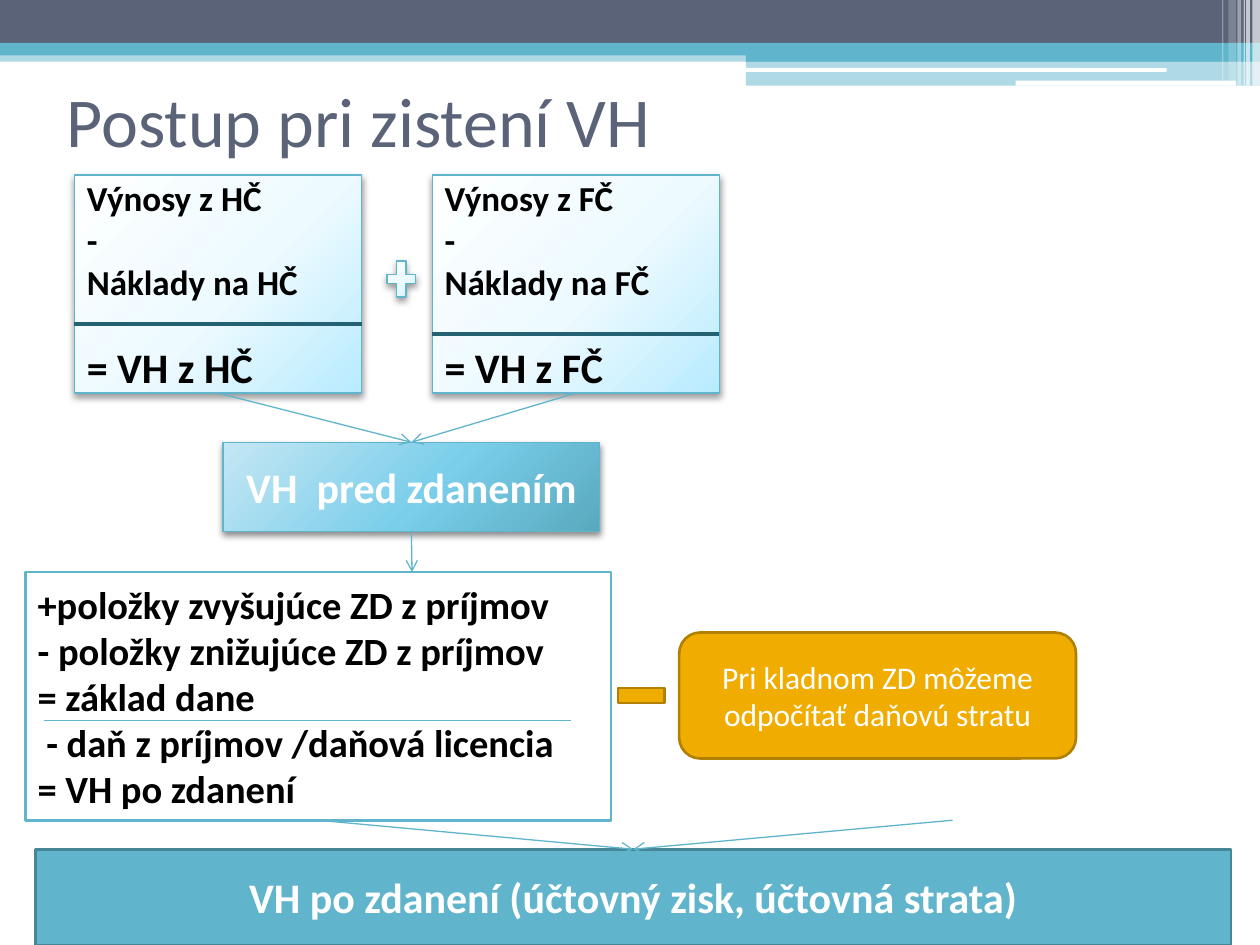
from pptx import Presentation
from pptx.dml.color import RGBColor
from pptx.enum.shapes import MSO_CONNECTOR, MSO_SHAPE as SHAPE
from pptx.enum.text import MSO_ANCHOR as ANCHOR, PP_ALIGN as ALIGN
from pptx.oxml import parse_xml
from pptx.oxml.ns import nsdecls, qn
from pptx.oxml.xmlchemy import OxmlElement
from pptx.util import Inches, Pt

FONT = "Calibri"
TEAL, SLATE, WHITE, BLACK = "60B5CC", "5A6378", "FFFFFF", "000000"
AMBER, AMBER_EDGE, DARK_TEAL, RULE = "F0AD00", "B28000", "478697", "246172"
PALE = [(0, "FEFFFF"), (55, "EDFAFF"), (100, "B7EBFF")]
DEEP = [(0, "C5E7F4"), (55, "7ACEEA"), (100, "59A9BE")]


def paint(fill, color, alpha=100):
    """Fill with one hex colour, optionally see-through."""
    fill.solid()
    fill.fore_color.rgb = RGBColor.from_string(color)
    if alpha < 100:
        node = OxmlElement("a:alpha")
        node.set("val", str(alpha * 1000))
        fill._xPr.find(".//" + qn("a:srgbClr")).append(node)


def glow(sp, stops, alpha=40):
    """Give a shape a radial gradient and a soft shadow below it."""
    gs = "".join(f'<a:gs pos="{pos * 1000}"><a:srgbClr val="{color}"/></a:gs>'
                 for pos, color in stops)
    sp.fill.background()
    pr = sp._element.spPr
    pr.replace(pr.find(qn("a:noFill")), parse_xml(
        f'<a:gradFill {nsdecls("a")} rotWithShape="1"><a:gsLst>{gs}</a:gsLst>'
        '<a:path path="circle"><a:fillToRect l="-40000" t="-90000" '
        'r="140000" b="190000"/></a:path></a:gradFill>'))
    pr.find(qn("a:effectLst")).append(parse_xml(
        f'<a:outerShdw {nsdecls("a")} blurRad="{Pt(4)}" dist="{Pt(2)}" '
        'dir="5400000" rotWithShape="0"><a:srgbClr val="000000">'
        f'<a:alpha val="{alpha * 1000}"/></a:srgbClr></a:outerShdw>'))


def add_box(s, box, kind=SHAPE.RECTANGLE, fill=None, alpha=100, line=None, width=1.5):
    """Add a preset shape in a box given as left, top, width, height."""
    sp = s.shapes.add_shape(kind, *map(Inches, box))
    sp.shadow.inherit = False
    if fill:
        paint(sp.fill, fill, alpha)
    if line:
        paint(sp.line.fill, line)
        sp.line.width = Pt(width)
    else:
        sp.line.fill.background()
    return sp


def write(sp, text, size=18, color=BLACK, bold=False, align=ALIGN.LEFT):
    """Write one paragraph, following any text already in the shape."""
    tf = sp.text_frame
    tf.word_wrap = True
    tf.vertical_anchor = ANCHOR.MIDDLE
    p = tf.add_paragraph() if tf.text else tf.paragraphs[0]
    p.text = text
    p.alignment = align
    for r in p.runs:
        r.font.name = FONT
        r.font.size = Pt(size)
        r.font.bold = bold
        paint(r.font.fill, color)
    return p


def add_line(s, start, end, color=TEAL, width=0.75, arrow=False, begin=None, finish=None):
    """Draw a straight line, joined to the bottom of begin and the top of finish."""
    line = s.shapes.add_connector(MSO_CONNECTOR.STRAIGHT, *map(Inches, start + end))
    paint(line.line.fill, color)
    line.line.width = Pt(width)
    if begin is not None:
        line.begin_connect(begin, 2)
    if finish is not None:
        line.end_connect(finish, 0)
    if arrow:
        tail = OxmlElement("a:tailEnd")
        tail.set("type", "arrow")
        line.line._get_or_add_ln().append(tail)
    line._element.spPr.append(OxmlElement("a:effectLst"))


def add_banner(s, width):
    """Draw the layered band and stripes along the top of the slide."""
    half = 5.92
    rest = width - half
    for box, color, alpha in [
            ((0, 0.4, width, 0.09), TEAL, 50),
            ((0, 0, width, 0.34), SLATE, 100),
            ((0, 0.34, width, 0.1), TEAL, 100),
            ((half, 0.39, rest, 0.1), TEAL, 100),
            ((half, 0.48, rest, 0.2), TEAL, 50)]:
        add_box(s, box, fill=color, alpha=alpha)
    for box in [(5.91, 0.54, 3.35, 0.03), (8.06, 0.64, 1.75, 0.04)]:
        add_box(s, box, SHAPE.ROUNDED_RECTANGLE, WHITE)
    for left, w, h, alpha in [
            (9.94, 0.06, 0.68, 65), (9.89, 0.03, 0.68, 65), (9.87, 0.01, 0.68, 60),
            (9.82, 0.03, 0.68, 40), (9.75, 0.06, 0.64, 20), (9.7, 0.01, 0.64, 30)]:
        add_box(s, (left, 0, w, h), fill=WHITE, alpha=alpha)


def add_title(s, box, text):
    """Place and format the title placeholder."""
    title = s.shapes.title
    title.left, title.top, title.width, title.height = map(Inches, box)
    write(title, text, size=40, color=SLATE)


def add_activity(s, box, code, rule_y):
    """Add the card that subtracts costs from revenues of one activity."""
    left, top, width, height = box
    card = add_box(s, box, line=TEAL, width=0.75)
    glow(card, PALE)
    write(card, f"Výnosy z {code}\v-", size=20, bold=True)
    write(card, f"Náklady na {code}", size=20, bold=True)
    write(card, f"= VH z {code}", size=24, bold=True).space_before = Pt(22)
    add_line(s, (left, top + rule_y), (left + width, top + rule_y), RULE, 2.25)
    return card


def add_pretax(s, box):
    """Add the box for the result before tax."""
    sp = add_box(s, box, line=TEAL, width=0.75)
    glow(sp, DEEP, 45)
    write(sp, "VH  pred zdanením", size=24, color=WHITE, bold=True, align=ALIGN.CENTER)
    return sp


def add_tax_steps(s, box):
    """Add the tax calculation with the rule under the tax base."""
    left, top = box[:2]
    sp = add_box(s, box, fill=WHITE, line=TEAL)
    for text in ["+položky zvyšujúce ZD z príjmov", "- položky znižujúce ZD z príjmov",
                 "= základ dane", " - daň z príjmov /daňová licencia", "= VH po zdanení"]:
        write(sp, text, size=22, bold=True)
    add_line(s, (left + 0.15, top + 1.18), (left + 4.33, top + 1.18))
    return sp


def add_loss_note(s, box):
    """Add the tax loss note with the minus sign before it."""
    left, top, _, height = box
    sp = add_box(s, box, SHAPE.ROUNDED_RECTANGLE, AMBER, line=AMBER_EDGE)
    write(sp, "Pri kladnom ZD môžeme odpočítať daňovú stratu", color=WHITE, align=ALIGN.CENTER)
    add_box(s, (left - 0.55, top + height / 2 - 0.25, 0.5, 0.5),
            SHAPE.MATH_MINUS, AMBER, line=AMBER_EDGE)


def add_result(s, box):
    """Add the bar for the result after tax."""
    sp = add_box(s, box, fill=TEAL, line=DARK_TEAL)
    write(sp, "VH po zdanení (účtovný zisk, účtovná strata)",
          size=24, color=WHITE, bold=True, align=ALIGN.CENTER)
    return sp


def main():
    """Build the slide and save it."""
    prs = Presentation()
    prs.slide_width, prs.slide_height = Inches(10), Inches(7.5)
    s = prs.slides.add_slide(prs.slide_layouts[5])
    add_banner(s, 10)
    add_title(s, (0.43, 0.44, 9, 1.02), "Postup pri zistení VH")
    cards = [add_activity(s, (left, 1.39, 2.28, 1.73), code, rule_y)
             for left, code, rule_y in [(0.59, "HČ", 1.18), (3.43, "FČ", 1.26)]]
    plus = add_box(s, (3.03, 2.02, 0.31, 0.39), SHAPE.MATH_PLUS, line=TEAL, width=0.75)
    glow(plus, PALE)
    pretax = add_pretax(s, (1.77, 3.51, 2.99, 0.71))
    steps = add_tax_steps(s, (0.2, 4.54, 4.65, 1.97))
    result = add_result(s, (0.28, 6.74, 9.49, 0.76))
    for x, card in zip((1.73, 4.57), cards):
        add_line(s, (x, 3.12), (3.27, 3.51), arrow=True, begin=card, finish=pretax)
    add_line(s, (3.27, 4.22), (3.27, 4.54), arrow=True, begin=pretax)
    add_line(s, (2.52, 6.51), (5.02, 6.74), arrow=True, begin=steps, finish=result)
    add_line(s, (7.56, 6.51), (5.02, 6.74), arrow=True, finish=result)
    add_loss_note(s, (5.39, 5.02, 3.15, 1))
    prs.save("out.pptx")


if __name__ == "__main__":
    main()
